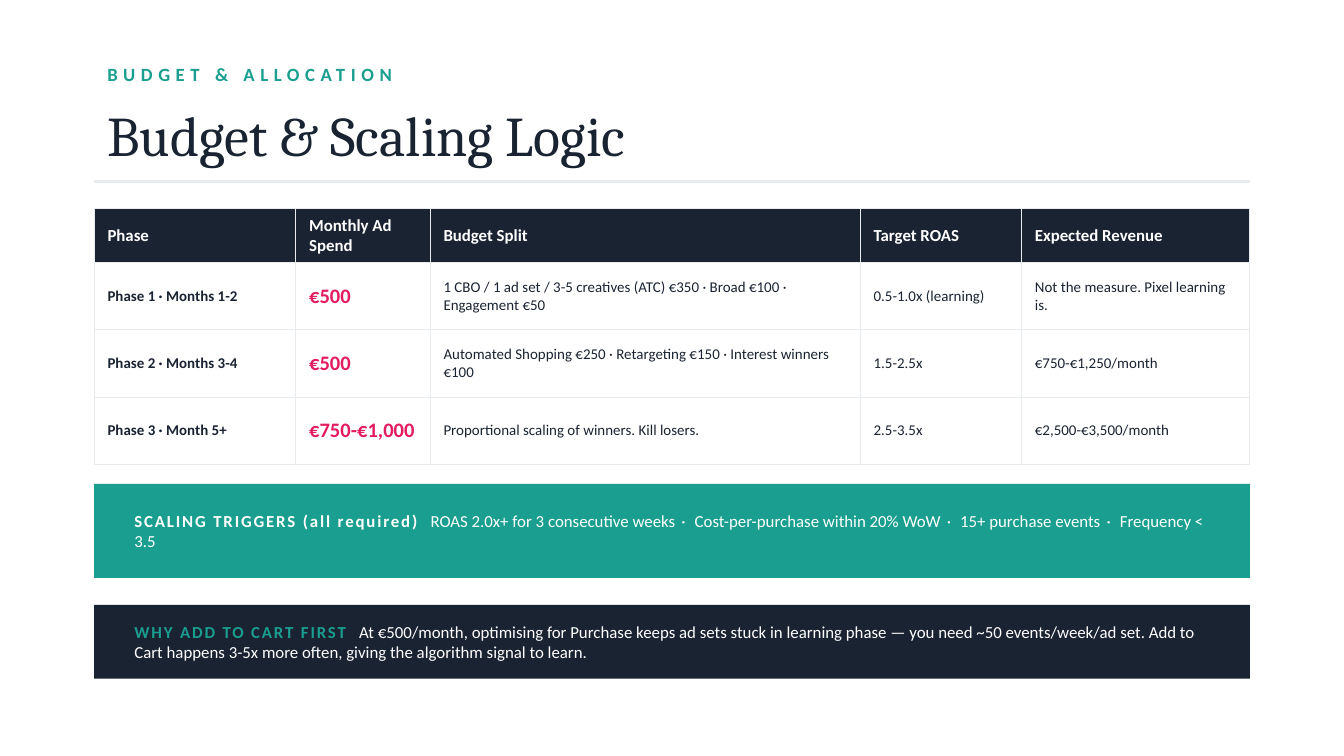
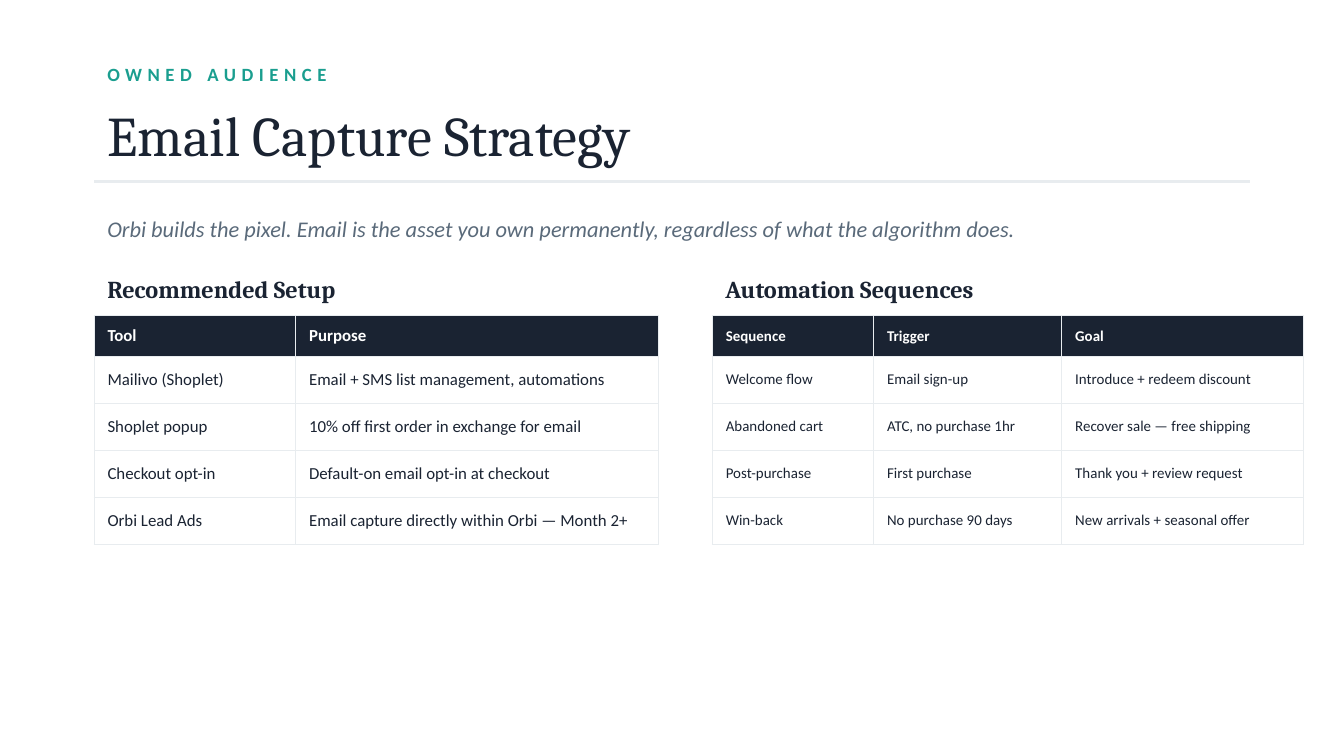
from collections import namedtuple
from dataclasses import dataclass

from lxml.etree import SubElement
from pptx import Presentation
from pptx.dml.color import RGBColor
from pptx.enum.shapes import MSO_CONNECTOR, MSO_SHAPE
from pptx.enum.text import MSO_ANCHOR, MSO_AUTO_SIZE, PP_ALIGN
from pptx.oxml.ns import qn
from pptx.util import Pt

Box = namedtuple("Box", "left top width height")
Style = namedtuple("Style", "font size color bold italic", defaults=(False, False))


@dataclass(frozen=True)
class Theme:
    navy: str = "1A2332"
    teal: str = "1A9E8F"
    pink: str = "E31C5F"
    slate: str = "5A6A7A"
    rule: str = "E8ECEF"
    white: str = "FFFFFF"
    sans: str = "Calibri"
    serif: str = "Cambria"
    title_size: float = 30
    heading_size: float = 13
    lead_size: float = 12
    figure_size: float = 11
    eyebrow_size: float = 10
    text_size: float = 9
    small_size: float = 8


THEME = Theme()
EYEBROW = Style(THEME.sans, THEME.eyebrow_size, THEME.teal, bold=True)
TITLE = Style(THEME.serif, THEME.title_size, THEME.navy)
HEADING = Style(THEME.serif, THEME.heading_size, THEME.navy, bold=True)
LEAD = Style(THEME.sans, THEME.lead_size, THEME.slate, italic=True)
FIGURE = Style(THEME.sans, THEME.figure_size, THEME.pink, bold=True)
TEXT = Style(THEME.sans, THEME.text_size, THEME.navy)
SMALL = Style(THEME.sans, THEME.small_size, THEME.navy)

LEFT, CONTENT_WIDTH = 50.4, 619.2
HEADER_BOX = Box(LEFT, 28.8, CONTENT_WIDTH, 68.4)


def rgb(value):
    return RGBColor.from_string(value)


def in_points(box):
    return [Pt(length) for length in box]


def apply_style(font, style):
    font.name = style.font
    font.size = Pt(style.size)
    font.bold = style.bold
    font.italic = style.italic
    font.color.rgb = rgb(style.color)


def add_span(para, text, spacing=0):
    """Add a run whose letters are spaced out by the given points."""
    span = para.add_run()
    span.text = text
    if spacing:
        span._r.get_or_add_rPr().set("spc", str(round(spacing * 100)))
    return span


def write(frame, text, style, spacing=0):
    frame.word_wrap = True
    frame.auto_size = MSO_AUTO_SIZE.NONE
    frame.vertical_anchor = MSO_ANCHOR.MIDDLE
    para = frame.paragraphs[0]
    para.alignment = PP_ALIGN.LEFT
    apply_style(para.font, style)
    add_span(para, text, spacing)


def add_label(page, box, text, style, spacing=0):
    write(page.shapes.add_textbox(*in_points(box)).text_frame, text, style, spacing)


def add_header(page, box, eyebrow, title):
    add_label(page, Box(box.left, box.top, 288, 21.6), eyebrow, EYEBROW, spacing=3)

    holder = page.shapes.title
    holder.left, holder.top, holder.width, holder.height = in_points(
        Box(box.left, box.top + 21.6, 576, 43.2))
    write(holder.text_frame, title, TITLE)

    bottom = box.top + box.height
    line = page.shapes.add_connector(MSO_CONNECTOR.STRAIGHT, *in_points(
        (box.left, bottom, box.left + box.width, bottom)))
    line.line.color.rgb = rgb(THEME.rule)
    line.line.width = Pt(1.5)
    SubElement(line._element.spPr, qn("a:effectLst"))


def add_borders(cell):
    properties = cell._tc.get_or_add_tcPr()
    for side in ("lnL", "lnR", "lnT", "lnB"):
        edge = SubElement(properties, qn(f"a:{side}"), w=str(Pt(0.5)))
        fill = SubElement(edge, qn("a:solidFill"))
        SubElement(fill, qn("a:srgbClr"), val=THEME.rule)


def add_grid(page, left, top, widths, heights, rows, head_size, styles):
    """Add a table; heights holds the header and body row heights, styles one per column."""
    head_height, body_height = heights
    box = Box(left, top, sum(widths), head_height + body_height * (len(rows) - 1))
    table = page.shapes.add_table(len(rows), len(widths), *in_points(box)).table
    table.horz_banding = False
    for column, width in zip(table.columns, widths):
        column.width = Pt(width)
    head_style = Style(THEME.sans, head_size, THEME.white, bold=True)

    for row_index, texts in enumerate(rows):
        is_head = row_index == 0
        table.rows[row_index].height = Pt(head_height if is_head else body_height)
        for column_index, text in enumerate(texts):
            cell = table.cell(row_index, column_index)
            add_borders(cell)
            if is_head:
                cell.fill.solid()
                cell.fill.fore_color.rgb = rgb(THEME.navy)
            else:
                cell.fill.background()
            cell.vertical_anchor = MSO_ANCHOR.MIDDLE
            para = cell.text_frame.paragraphs[0]
            apply_style(para.font, head_style if is_head else styles[column_index])
            add_span(para, text)


def add_band(page, box, fill, label, label_color, phrases):
    """Add a filled band with a bold label followed by phrases parted by dots."""
    band = page.shapes.add_shape(MSO_SHAPE.RECTANGLE, *in_points(box))
    band.shadow.inherit = False
    band.fill.solid()
    band.fill.fore_color.rgb = rgb(fill)
    band.line.fill.background()
    frame = band.text_frame
    frame.word_wrap = True
    frame.vertical_anchor = MSO_ANCHOR.MIDDLE
    frame.margin_left = frame.margin_right = Pt(21.6)

    para = frame.paragraphs[0]
    para.alignment = PP_ALIGN.LEFT
    add_span(para, label, spacing=1)
    add_span(para, " ", spacing=4)
    for index, phrase in enumerate(phrases):
        if index:
            add_span(para, " · ", spacing=1.4)
        add_span(para, phrase)

    body = Style(THEME.sans, THEME.text_size, THEME.white)
    for span in para.runs:
        apply_style(span.font, body)
    apply_style(para.runs[0].font, body._replace(color=label_color, bold=True))


def add_section(page, left, top, heading, **grid):
    add_label(page, Box(left, top, 288, 21.6), heading, HEADING)
    add_grid(page, left, top + 25.2, heights=(21.6, 25.2), **grid)


def add_page(deck, eyebrow, title):
    page = deck.slides.add_slide(deck.slide_layouts.get_by_name("Title Only"))
    add_header(page, HEADER_BOX, eyebrow, title)
    return page


def build_budget(deck):
    page = add_page(deck, "BUDGET & ALLOCATION", "Budget & Scaling Logic")
    add_grid(
        page, LEFT, 111.6,
        widths=(108, 72, 230.4, 86.4, 122.4),
        heights=(25.2, 36),
        head_size=THEME.text_size,
        styles=(SMALL._replace(bold=True), FIGURE, SMALL, SMALL, SMALL),
        rows=[
            ("Phase", "Monthly Ad Spend", "Budget Split", "Target ROAS", "Expected Revenue"),
            ("Phase 1 · Months 1-2", "€500",
             "1 CBO / 1 ad set / 3-5 creatives (ATC) €350 · Broad €100 · Engagement €50",
             "0.5-1.0x (learning)", "Not the measure. Pixel learning is."),
            ("Phase 2 · Months 3-4", "€500",
             "Automated Shopping €250 · Retargeting €150 · Interest winners €100",
             "1.5-2.5x", "€750-€1,250/month"),
            ("Phase 3 · Month 5+", "€750-€1,000",
             "Proportional scaling of winners. Kill losers.",
             "2.5-3.5x", "€2,500-€3,500/month"),
        ])
    add_band(
        page, Box(LEFT, 259.2, CONTENT_WIDTH, 50.4), THEME.teal,
        "SCALING TRIGGERS (all required)", THEME.white,
        ["ROAS 2.0x+ for 3 consecutive weeks", "Cost-per-purchase within 20% WoW",
         "15+ purchase events", "Frequency < 3.5"])
    add_band(
        page, Box(LEFT, 324, CONTENT_WIDTH, 39.6), THEME.navy,
        "WHY ADD TO CART FIRST", THEME.teal,
        ["At €500/month, optimising for Purchase keeps ad sets stuck in learning phase — "
         "you need ~50 events/week/ad set. Add to Cart happens 3-5x more often, "
         "giving the algorithm signal to learn."])


def build_email(deck):
    page = add_page(deck, "OWNED AUDIENCE", "Email Capture Strategy")
    add_label(
        page, Box(LEFT, 108, CONTENT_WIDTH, 28.8),
        "Orbi builds the pixel. Email is the asset you own permanently, "
        "regardless of what the algorithm does.", LEAD)
    add_section(
        page, LEFT, 144, "Recommended Setup",
        widths=(108, 194.4),
        head_size=THEME.text_size,
        styles=(TEXT, TEXT),
        rows=[
            ("Tool", "Purpose"),
            ("Mailivo (Shoplet)", "Email + SMS list management, automations"),
            ("Shoplet popup", "10% off first order in exchange for email"),
            ("Checkout opt-in", "Default-on email opt-in at checkout"),
            ("Orbi Lead Ads", "Email capture directly within Orbi — Month 2+"),
        ])
    add_section(
        page, 381.6, 144, "Automation Sequences",
        widths=(86.4, 100.8, 129.6),
        head_size=THEME.small_size,
        styles=(SMALL, SMALL, SMALL),
        rows=[
            ("Sequence", "Trigger", "Goal"),
            ("Welcome flow", "Email sign-up", "Introduce + redeem discount"),
            ("Abandoned cart", "ATC, no purchase 1hr", "Recover sale — free shipping"),
            ("Post-purchase", "First purchase", "Thank you + review request"),
            ("Win-back", "No purchase 90 days", "New arrivals + seasonal offer"),
        ])


def main():
    deck = Presentation()
    deck.slide_width, deck.slide_height = Pt(720), Pt(405)
    build_budget(deck)
    build_email(deck)
    deck.save("out.pptx")


if __name__ == "__main__":
    main()
